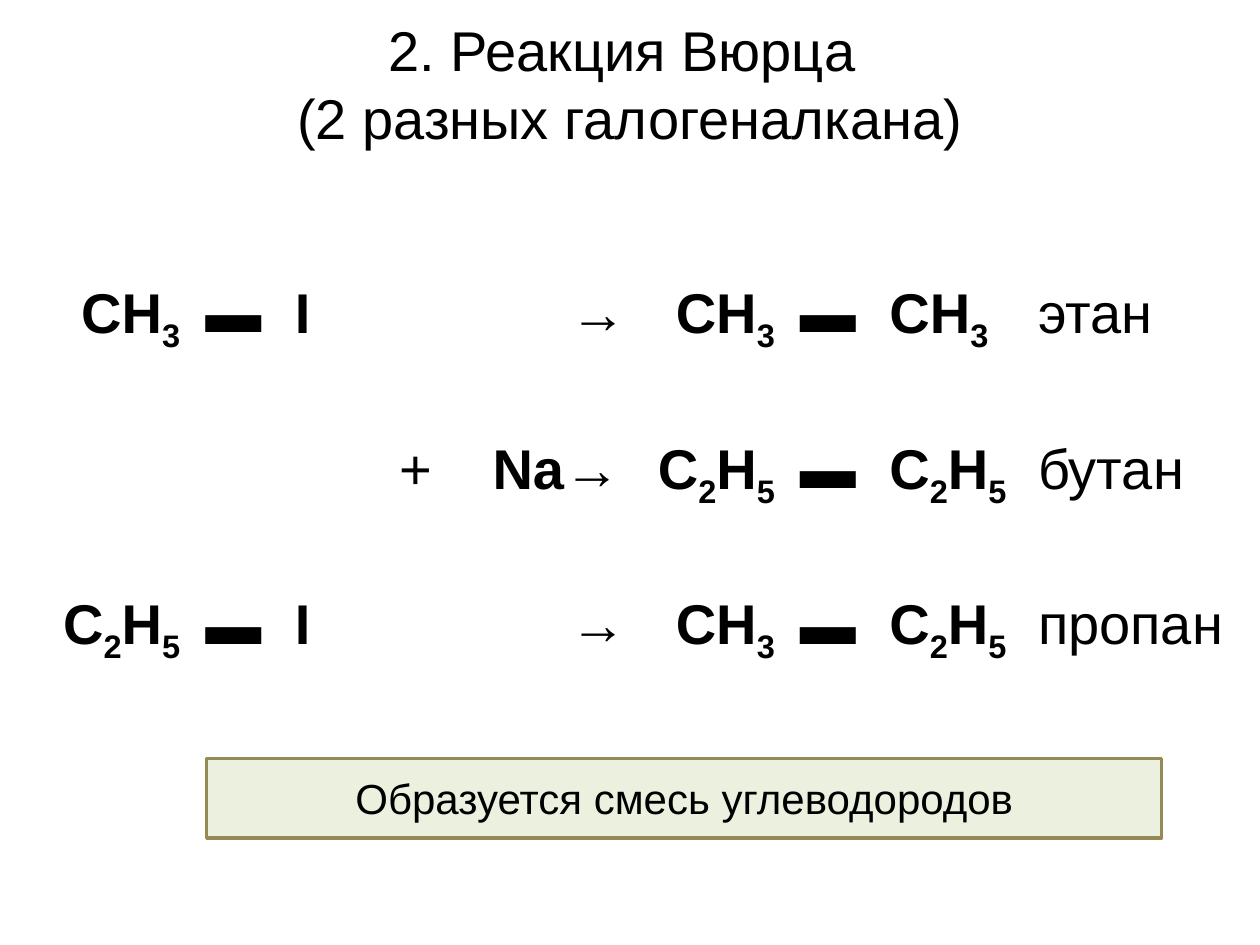
import itertools
from dataclasses import dataclass

import pptx
import pptx.dml.color
import pptx.enum.shapes
import pptx.enum.text
import pptx.util

Pt = pptx.util.Pt
Align = pptx.enum.text.PP_ALIGN
Middle = pptx.enum.text.MSO_ANCHOR.MIDDLE

COLORS = {"ink": "000000", "fill": "EBF1DE", "edge": "948A54"}
BOND = "▬"
COLS = [87.84, 51.12, 39.6, 73.44, 90.72, 84.96, 51.12, 84.96, 133.2]
ROW = 89.14


@dataclass
class Entry:
    row: int
    col: int
    text: str
    align: Align = Align.LEFT
    bold: bool = True
    face: str = "Arial"


@dataclass
class Product:
    left: str
    right: str
    name: str


PRODUCTS = [
    Product("СН3", "СН3", "этан"),
    Product("С2Н5", "С2Н5", "бутан"),
    Product("СН3", "С2Н5", "пропан"),
]
HALIDES = {0: "СН3", 2: "С2Н5"}


def rgb(name: str) -> pptx.dml.color.RGBColor:
    return pptx.dml.color.RGBColor.from_string(COLORS[name])


def style(para, size: float, align: Align, bold: bool = False, face: str = "Arial") -> None:
    para.alignment = align
    font = para.font
    font.size, font.bold, font.name = Pt(size), bold, face
    font.color.rgb = rgb("ink")


def label(shape, text: str, size: float) -> None:
    frame = shape.text_frame
    frame.word_wrap = True
    frame.vertical_anchor = Middle
    para = frame.paragraphs[0]
    para.text = text
    style(para, size, Align.CENTER)


def bond(row: int, col: int) -> Entry:
    return Entry(row, col, BOND, face="Times New Roman")


def entries() -> list[Entry]:
    items = [
        Entry(1, 3, "+", Align.CENTER, False),
        Entry(1, 4, "Na→"),
    ]
    for row, name in HALIDES.items():
        items += [
            Entry(row, 0, name, Align.RIGHT),
            bond(row, 1),
            Entry(row, 2, "I"),
            Entry(row, 4, "→", Align.RIGHT),
        ]
    for row, item in enumerate(PRODUCTS):
        items += [
            Entry(row, 5, item.left, Align.RIGHT),
            bond(row, 6),
            Entry(row, 7, item.right),
            Entry(row, 8, item.name, bold=False),
        ]
    return items


def write(table, entry: Entry) -> None:
    para = table.cell(entry.row, entry.col).text_frame.paragraphs[0]
    style(para, 32, entry.align, entry.bold, entry.face)
    for digit, chars in itertools.groupby(entry.text, str.isdigit):
        run = para.add_run()
        run.text = "".join(chars)
        if digit:
            run._r.get_or_add_rPr().set("baseline", "-25000")


def scheme(slide) -> None:
    count = len(PRODUCTS)
    table = slide.shapes.add_table(
        count, len(COLS), Pt(22.32), Pt(157.68), Pt(sum(COLS)), Pt(ROW * count)
    ).table
    table.first_row = False
    table.horz_banding = False
    for col, width in zip(table.columns, COLS):
        col.width = Pt(width)
    for cell in table.iter_cells():
        cell.fill.background()
    for entry in entries():
        write(table, entry)


def main() -> None:
    deck = pptx.Presentation()
    deck.slide_width, deck.slide_height = Pt(720), Pt(540)
    slide = deck.slides.add_slide(deck.slide_layouts[6])

    title = slide.shapes.add_textbox(Pt(36), Pt(21.6), Pt(648), Pt(51.84))
    label(title, "2. Реакция Вюрца \v(2 разных галогеналкана)", 32)

    scheme(slide)

    note = slide.shapes.add_shape(
        pptx.enum.shapes.MSO_SHAPE.RECTANGLE, Pt(118.08), Pt(433.44), Pt(545.76), Pt(45.36)
    )
    note.shadow.inherit = False
    note.fill.solid()
    note.fill.fore_color.rgb = rgb("fill")
    note.line.color.rgb = rgb("edge")
    note.line.width = Pt(2)
    label(note, "Образуется смесь углеводородов", 24)

    deck.save("out.pptx")


if __name__ == "__main__":
    main()
